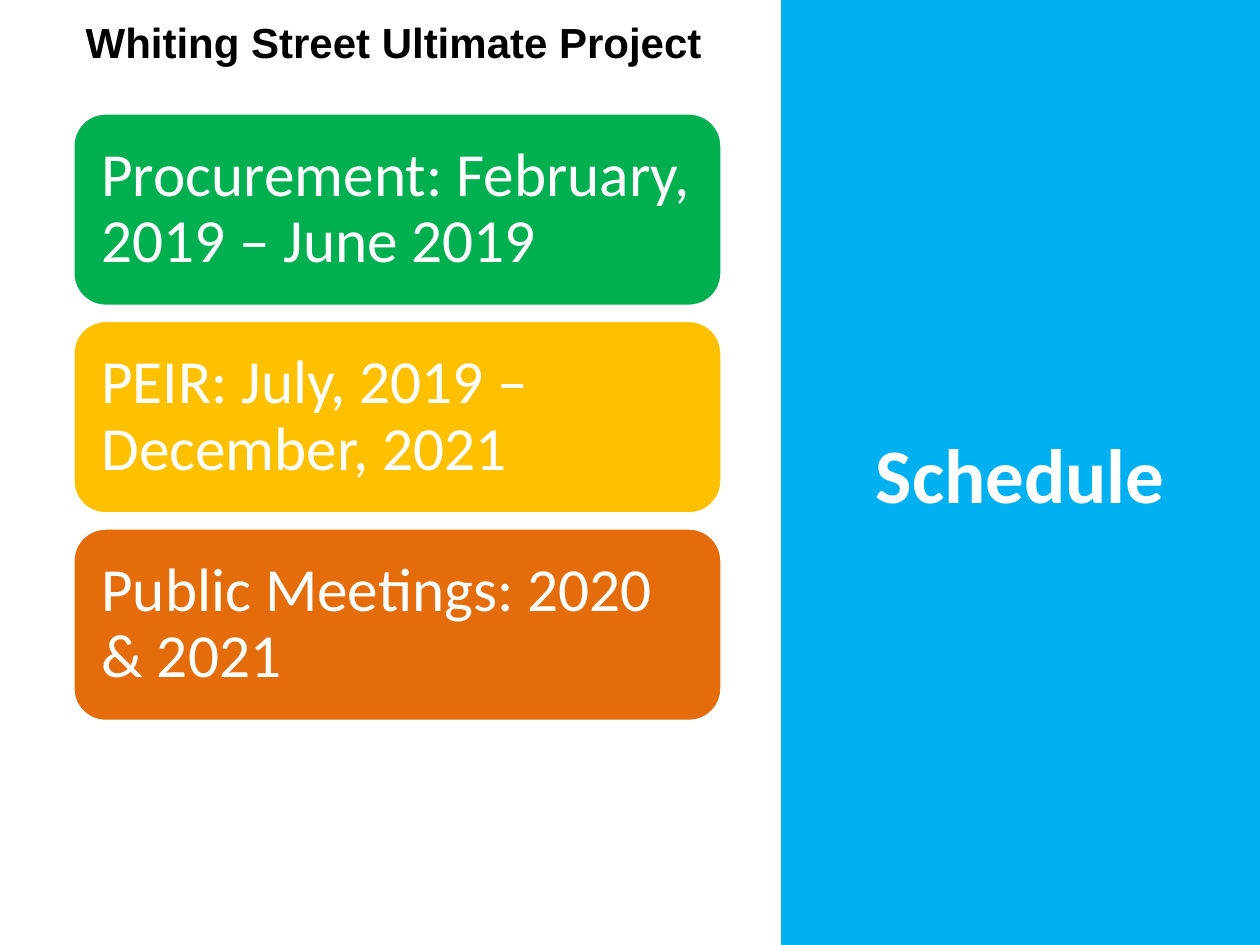
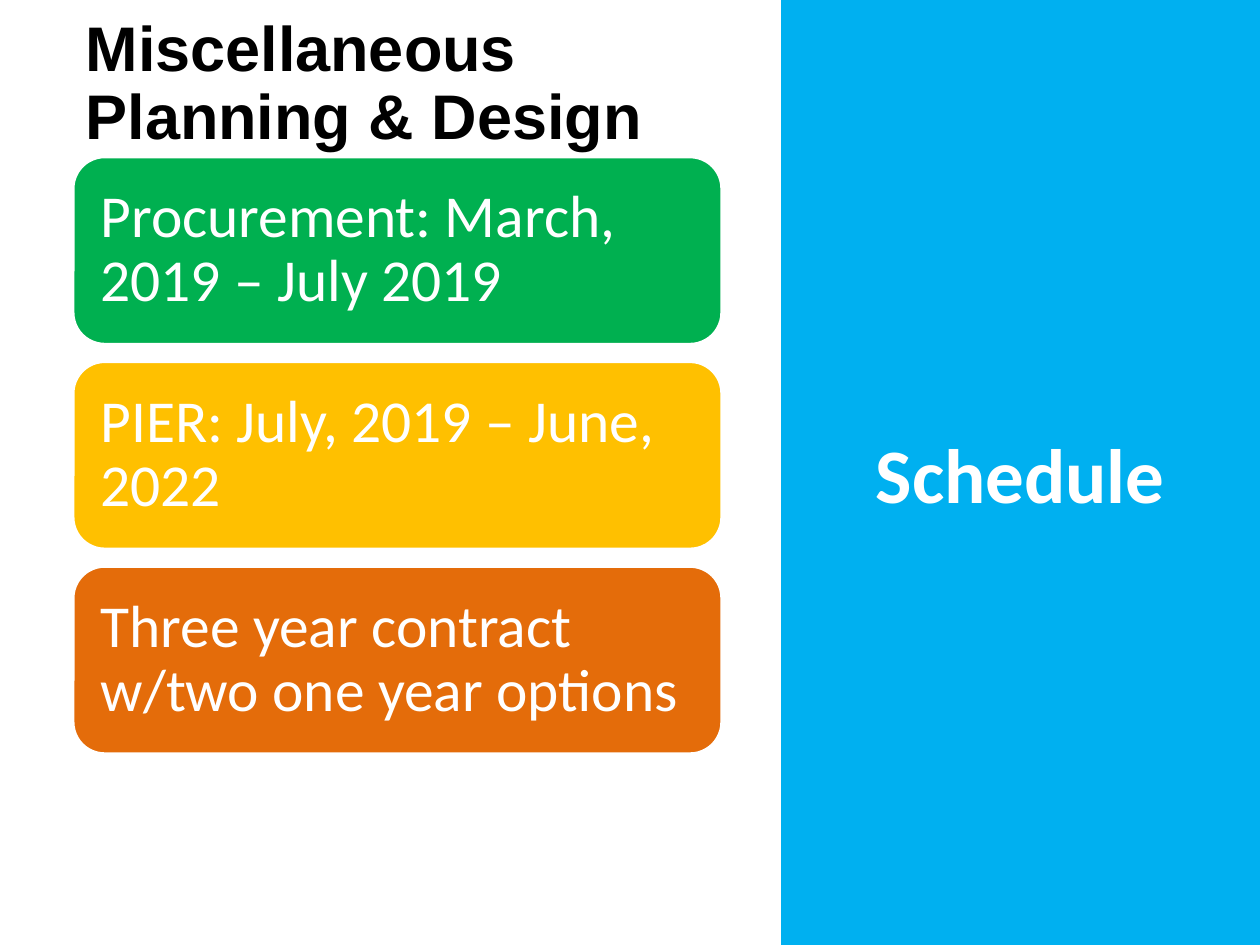
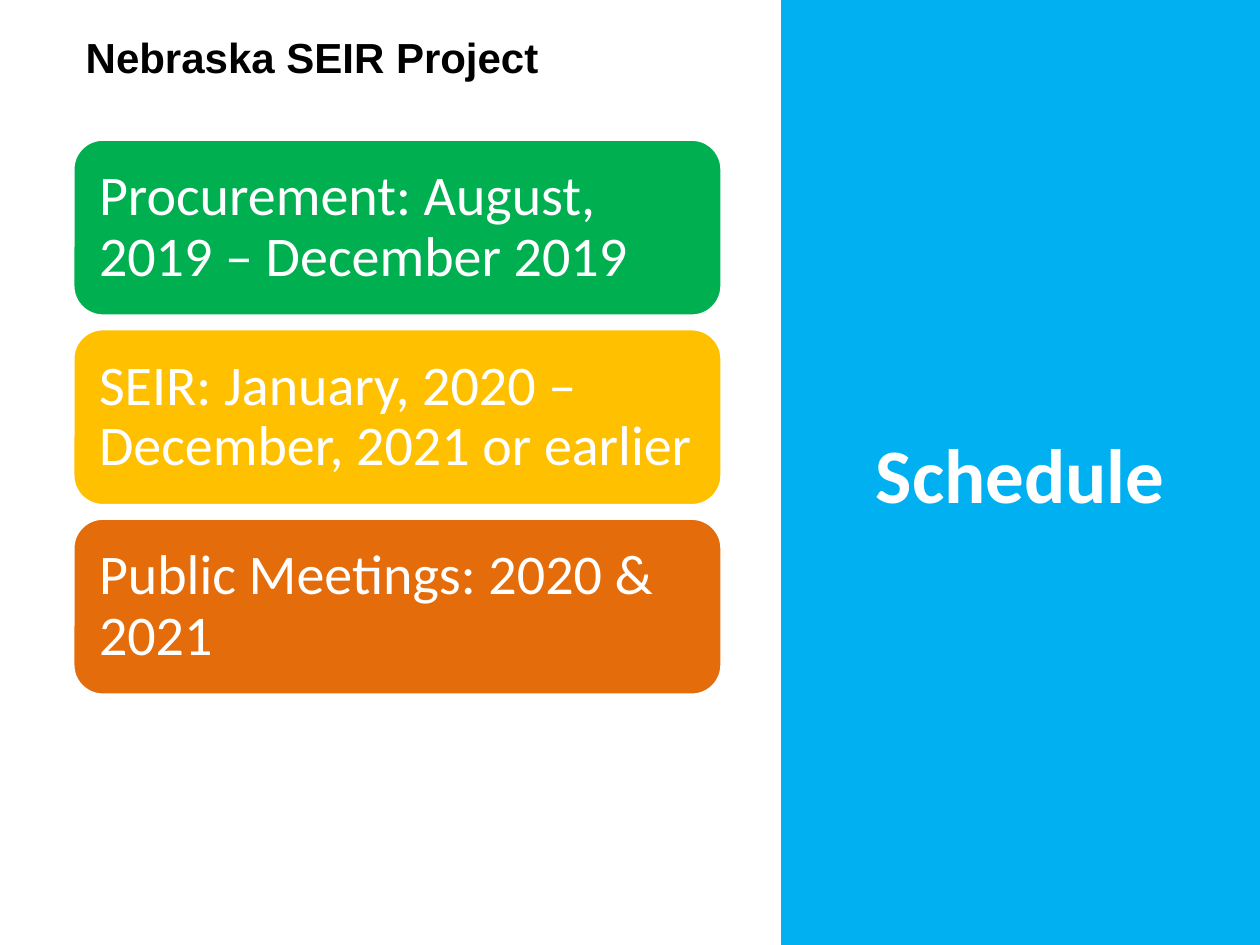
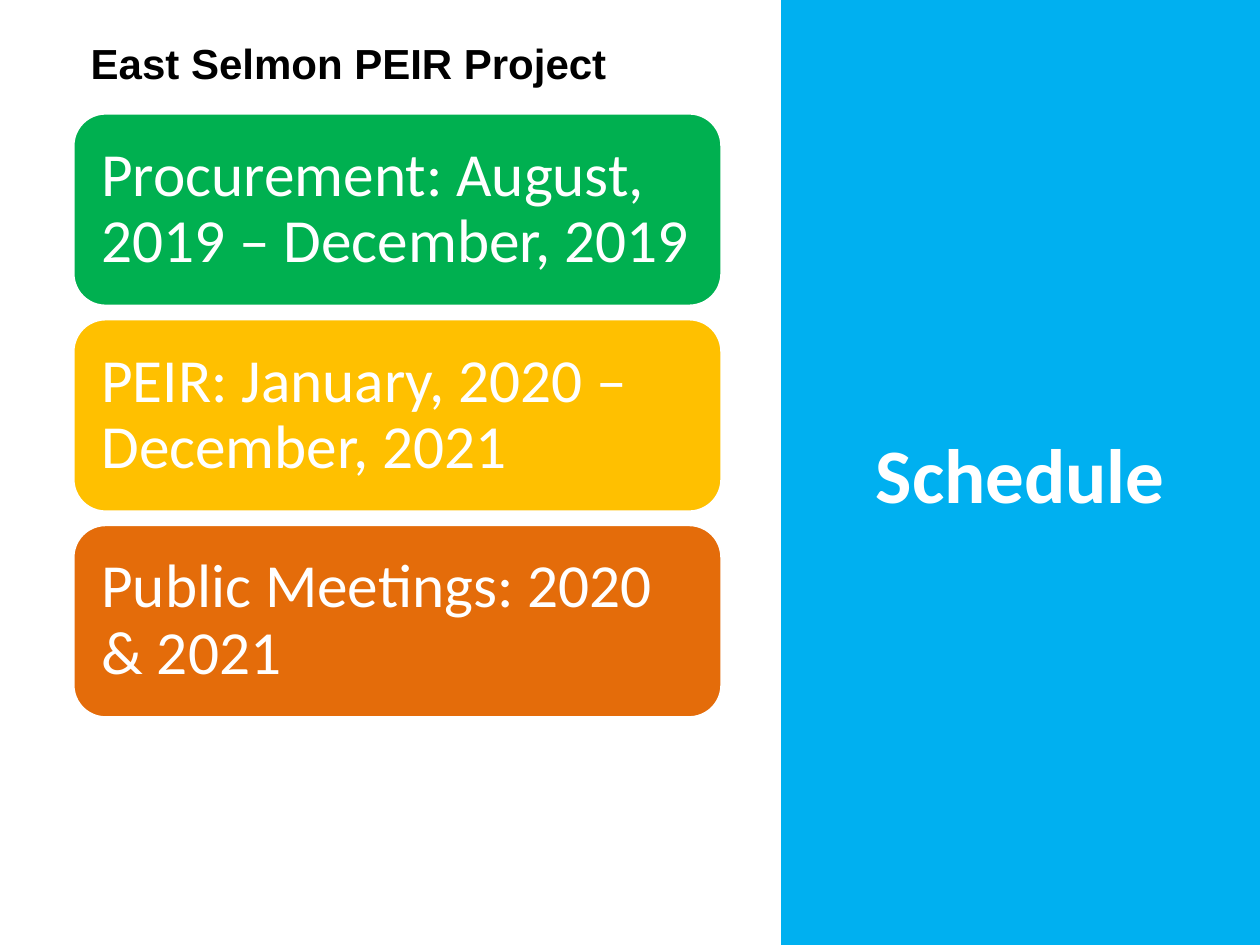
from dataclasses import dataclass

from pptx import Presentation
from pptx.dml.color import RGBColor
from pptx.enum.shapes import MSO_SHAPE
from pptx.enum.text import MSO_ANCHOR, MSO_AUTO_SIZE, PP_ALIGN
from pptx.util import Pt


@dataclass(frozen=True)
class Theme:
    """Colours, fonts and type sizes shared by every slide."""

    band: RGBColor = RGBColor(0x00, 0xB0, 0xF0)
    light: RGBColor = RGBColor(0xFF, 0xFF, 0xFF)
    dark: RGBColor = RGBColor(0x00, 0x00, 0x00)
    cards: tuple = (
        RGBColor(0x00, 0xB0, 0x50),
        RGBColor(0xFF, 0xC0, 0x00),
        RGBColor(0xE4, 0x6C, 0x0A),
    )
    body_font: str = "Calibri"
    heading_font: str = "Arial"
    title_size: int = 44
    heading_size: int = 24
    large_heading_size: int = 36
    card_sizes: tuple = (35, 34, 32)


@dataclass(frozen=True)
class Schedule:
    """Content and layout of one project schedule, in points."""

    project: str
    steps: tuple
    card_size: int
    first_top: float
    pitch: float
    heading_top: float
    heading_height: float
    heading_left: float = 41.9
    heading_size: int = Theme.heading_size
    heading_spacing: float = 1.0


THEME = Theme()
LARGE, MEDIUM, SMALL = THEME.card_sizes
CARD_LEFT = 42.1
CARD_WIDTH = 370
COLUMN_RIGHT = CARD_LEFT + CARD_WIDTH
CARD_HEIGHT_RATIO = 3.13
CARD_MARGIN_RATIO = 0.3

SCHEDULES = (
    Schedule(
        "Whiting Street Ultimate Project",
        (
            "Procurement: February, 2019 – June 2019",
            "PEIR: July, 2019 – December, 2021",
            "Public Meetings: 2020 & 2021",
        ),
        LARGE, first_top=65, pitch=118.6, heading_top=6, heading_height=36,
    ),
    Schedule(
        "Miscellaneous Planning & Design",
        (
            "Procurement: March, 2019 – July 2019",
            "PIER: July, 2019 – June, 2022",
            "Three year contract w/two one year options",
        ),
        MEDIUM, first_top=90, pitch=117, heading_top=6, heading_height=86,
        heading_size=THEME.large_heading_size, heading_spacing=0.9,
    ),
    Schedule(
        "Nebraska SEIR Project",
        (
            "Procurement: August, 2019 – December 2019",
            "SEIR: January, 2020 – December, 2021 or earlier",
            "Public Meetings: 2020 & 2021",
        ),
        SMALL, first_top=80, pitch=108.3, heading_top=18, heading_height=33,
        heading_spacing=0.9,
    ),
    Schedule(
        "East Selmon PEIR Project",
        (
            "Procurement: August, 2019 – December, 2019",
            "PEIR: January, 2020 – December, 2021",
            "Public Meetings: 2020 & 2021",
        ),
        LARGE, first_top=65, pitch=117.6, heading_top=18, heading_height=36,
        heading_left=44.8,
    ),
)


def write_text(shape, text, font_name, size, color, bold=False,
               align=PP_ALIGN.LEFT, spacing=1.0):
    """Write one formatted, wrapping paragraph into a shape."""
    frame = shape.text_frame
    frame.word_wrap = True
    paragraph = frame.paragraphs[0]
    paragraph.text = text
    paragraph.alignment = align
    paragraph.line_spacing = spacing
    font = paragraph.font
    font.name = font_name
    font.size = Pt(size)
    font.bold = bold
    font.color.rgb = color


def fill_shape(shape, color):
    """Give a shape a solid fill."""
    shape.fill.solid()
    shape.fill.fore_color.rgb = color


def add_title_band(slide, text):
    """Turn the title placeholder into the band on the right."""
    title = slide.shapes.title
    title.left, title.top = Pt(446.4), Pt(0)
    title.width, title.height = Pt(273.6), Pt(540)
    fill_shape(title, THEME.band)
    write_text(title, text, THEME.body_font, THEME.title_size, THEME.light,
               bold=True, align=PP_ALIGN.CENTER)
    title.text_frame.auto_size = MSO_AUTO_SIZE.NONE
    title.text_frame.vertical_anchor = MSO_ANCHOR.MIDDLE


def add_card(slide, text, color, top, size):
    """Add a rounded card whose height and margins follow its type size."""
    card = slide.shapes.add_shape(
        MSO_SHAPE.ROUNDED_RECTANGLE, Pt(CARD_LEFT), Pt(top),
        Pt(CARD_WIDTH), Pt(size * CARD_HEIGHT_RATIO))
    card.shadow.inherit = False
    fill_shape(card, color)
    card.line.color.rgb = THEME.light
    card.line.width = Pt(1)
    write_text(card, text, THEME.body_font, size, THEME.light, spacing=0.9)
    frame = card.text_frame
    frame.vertical_anchor = MSO_ANCHOR.MIDDLE
    margin = Pt(size * CARD_MARGIN_RATIO)
    frame.margin_left = frame.margin_right = margin
    frame.margin_top = frame.margin_bottom = margin


def add_heading(slide, schedule):
    """Add the project name above the cards."""
    heading = slide.shapes.add_textbox(
        Pt(schedule.heading_left), Pt(schedule.heading_top),
        Pt(COLUMN_RIGHT - schedule.heading_left), Pt(schedule.heading_height))
    write_text(heading, schedule.project, THEME.heading_font,
               schedule.heading_size, THEME.dark, bold=True,
               spacing=schedule.heading_spacing)


def add_schedule_slide(presentation, schedule):
    """Add one slide with the title band, step cards and project name."""
    slide = presentation.slides.add_slide(presentation.slide_layouts[5])
    add_title_band(slide, "Schedule")
    for index, (step, color) in enumerate(zip(schedule.steps, THEME.cards)):
        top = schedule.first_top + index * schedule.pitch
        add_card(slide, step, color, top, schedule.card_size)
    add_heading(slide, schedule)


def main():
    """Build and save the presentation."""
    presentation = Presentation()
    presentation.slide_width, presentation.slide_height = Pt(720), Pt(540)
    for schedule in SCHEDULES:
        add_schedule_slide(presentation, schedule)
    presentation.save("out.pptx")


if __name__ == "__main__":
    main()
